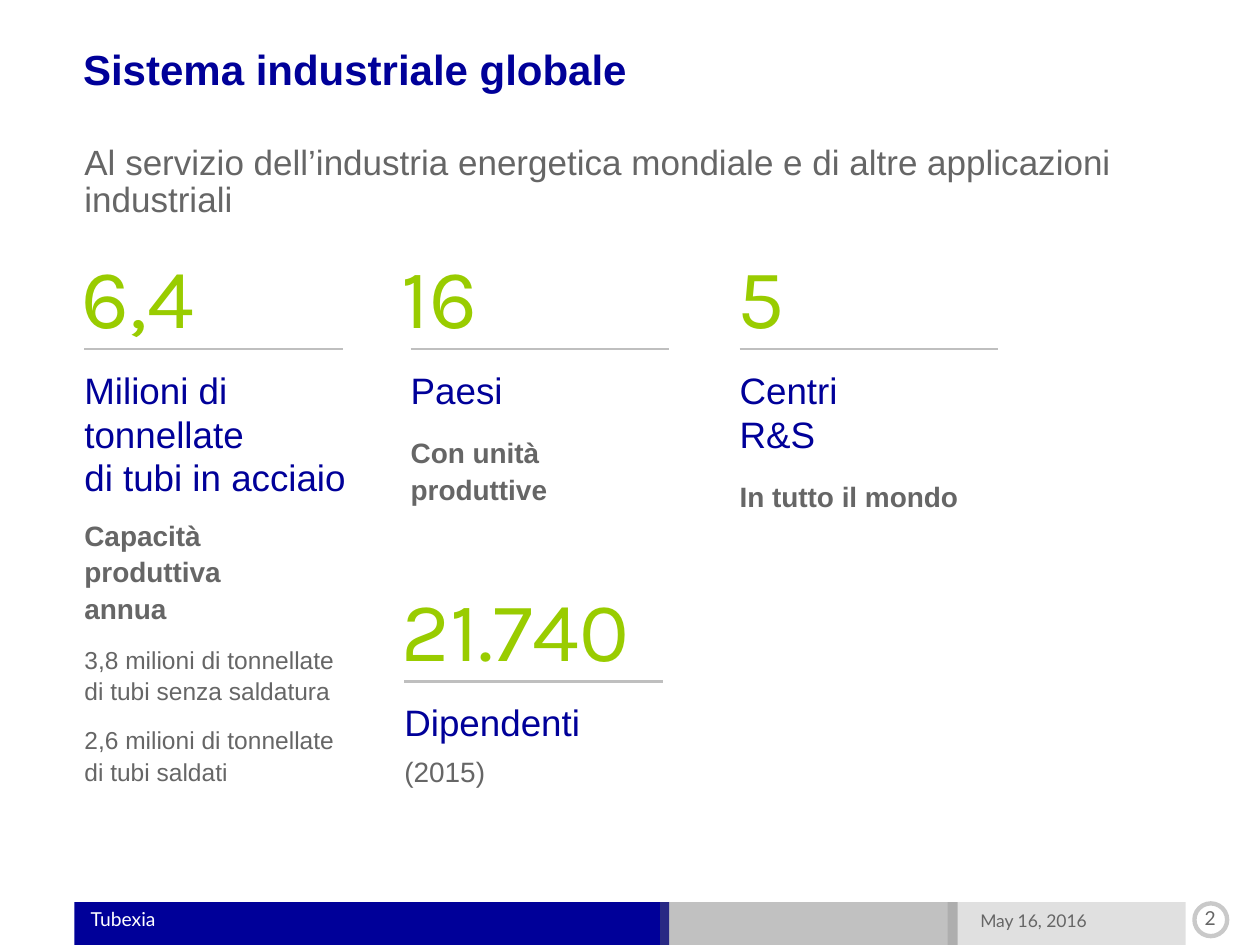
from dataclasses import dataclass

from lxml import etree
from pptx import Presentation
from pptx.dml.color import RGBColor
from pptx.enum.shapes import MSO_CONNECTOR, MSO_SHAPE
from pptx.enum.text import PP_ALIGN
from pptx.oxml.ns import qn
from pptx.util import Emu, Pt

PX = 9144  # EMU per px, 100 px to the inch

BLUE = RGBColor(0x00, 0x00, 0x99)
GREEN = RGBColor(0x99, 0xCC, 0x00)
GRAY = RGBColor(0x66, 0x66, 0x66)
RULE_GRAY = RGBColor(0xBF, 0xBF, 0xBF)
WHITE = RGBColor(0xFF, 0xFF, 0xFF)

RECT, OVAL = MSO_SHAPE.RECTANGLE, MSO_SHAPE.OVAL
STRAIGHT = MSO_CONNECTOR.STRAIGHT
LEFT, CENTER = PP_ALIGN.LEFT, PP_ALIGN.CENTER

RULE_WIDTH, RULE_DROP, LABEL_DROP = 205, 83, 98


@dataclass
class Para:
    text: str
    size: int
    color: RGBColor
    font: str = "Arial"
    bold: bool = False
    spacing: float | Pt | None = None
    before: int = 0
    align: PP_ALIGN = LEFT


@dataclass
class Stat:
    x: int
    y: int
    label_x: int
    figure: str
    figure_width: int
    label_height: int
    paras: list[Para]


@dataclass
class Bar:
    x: int
    width: int
    color: RGBColor
    opacity: int


def px(n: int) -> Emu:
    return Emu(n * PX)


def label(text: str) -> Para:
    return Para(text, 21, BLUE, spacing=Pt(25))


def strong(text: str, before: int = 0) -> Para:
    return Para(text, 16, GRAY, bold=True, spacing=Pt(21), before=before)


def detail(text: str) -> Para:
    return Para(text, 14, GRAY, spacing=Pt(18), before=10)


def add_text(slide, x: int, y: int, w: int, h: int, paras: list[Para]) -> None:
    tf = slide.shapes.add_textbox(px(x), px(y), px(w), px(h)).text_frame
    tf.word_wrap = True
    tf.margin_left = tf.margin_right = tf.margin_top = tf.margin_bottom = 0
    for i, para in enumerate(paras):
        p = tf.add_paragraph() if i else tf.paragraphs[0]
        p.text = para.text
        p.alignment = para.align
        p.line_spacing = para.spacing
        p.space_before = Pt(para.before)
        for r in p.runs:
            r.font.name = para.font
            r.font.size = Pt(para.size)
            r.font.bold = para.bold
            r.font.color.rgb = para.color


def set_opacity(sp, percent: int) -> None:
    color = next(sp._element.spPr.iter(qn("a:srgbClr")))
    etree.SubElement(color, qn("a:alpha"), val=str(percent * 1000))


def add_bar(slide, bar: Bar) -> None:
    sp = slide.shapes.add_shape(RECT, px(bar.x), px(716), px(bar.width), px(35))
    sp.shadow.inherit = False
    sp.fill.solid()
    sp.fill.fore_color.rgb = bar.color
    sp.line.fill.background()
    if bar.opacity < 100:
        set_opacity(sp, bar.opacity)


def add_ring(slide) -> None:
    sp = slide.shapes.add_shape(OVAL, px(948), px(717), px(26), px(26))
    sp.shadow.inherit = False
    sp.fill.background()
    sp.line.color.rgb = GRAY
    sp.line.width = Pt(2.5)
    set_opacity(sp, 35)


def add_rule(slide, x: int, y: int) -> None:
    line = slide.shapes.add_connector(STRAIGHT, px(x), px(y), px(x + RULE_WIDTH), px(y))
    line.line.color.rgb = RULE_GRAY
    line.line.width = Pt(1.5)
    etree.SubElement(line._element.spPr, qn("a:effectLst"))


def add_stat(slide, stat: Stat) -> None:
    add_text(slide, stat.x, stat.y, stat.figure_width, 77,
             [Para(stat.figure, 48, GREEN, "Karla")])
    add_rule(slide, stat.label_x, stat.y + RULE_DROP)
    add_text(slide, stat.label_x, stat.y + LABEL_DROP, 213, stat.label_height, stat.paras)


BARS = [
    Bar(59, 472, BLUE, 100),
    Bar(524, 236, GRAY, 40),
    Bar(752, 189, GRAY, 20),
]

STATS = [
    Stat(65, 194, 67, "6,4", 132, 394, [
        label("Milioni di tonnellate\ndi tubi in acciaio"),
        strong("Capacità", before=9),
        strong("produttiva"),
        strong("annua"),
        detail("3,8 milioni di tonnellate\ndi tubi senza saldatura"),
        detail("2,6 milioni di tonnellate\ndi tubi saldati"),
    ]),
    Stat(319, 194, 326, "16", 132, 112,
         [label("Paesi"), strong("Con unità\nproduttive", before=12)]),
    Stat(585, 194, 587, "5", 132, 118,
         [label("Centri\nR&S"), strong("In tutto il mondo", before=12)]),
    Stat(319, 458, 321, "21.740", 245, 69,
         [label("Dipendenti"), Para("(2015)", 16, GRAY, spacing=Pt(25))]),
]


def main() -> None:
    prs = Presentation()
    prs.slide_width, prs.slide_height = px(1000), px(750)
    s = prs.slides.add_slide(prs.slide_layouts[6])

    # Footer
    for bar in BARS:
        add_bar(s, bar)
    add_text(s, 72, 722, 444, 17, [Para("Tubexia", 11, WHITE, "Lato", spacing=0.9)])
    add_text(s, 939, 719, 43, 19, [Para("2", 11, GRAY, "Lato", align=CENTER)])
    add_text(s, 778, 724, 155, 19, [Para("May 16, 2016", 10, GRAY, "Lato", spacing=0.9)])
    add_ring(s)

    # Headings
    add_text(s, 66, 39, 867, 37,
             [Para("Sistema industriale globale", 24, BLUE, bold=True, spacing=0.9)])
    add_text(s, 67, 115, 857, 61,
             [Para("Al servizio dell’industria energetica mondiale e di altre "
                   "applicazioni industriali", 20, GRAY, spacing=0.9)])

    # Key figures
    for stat in STATS:
        add_stat(s, stat)

    prs.save("out.pptx")


if __name__ == "__main__":
    main()
